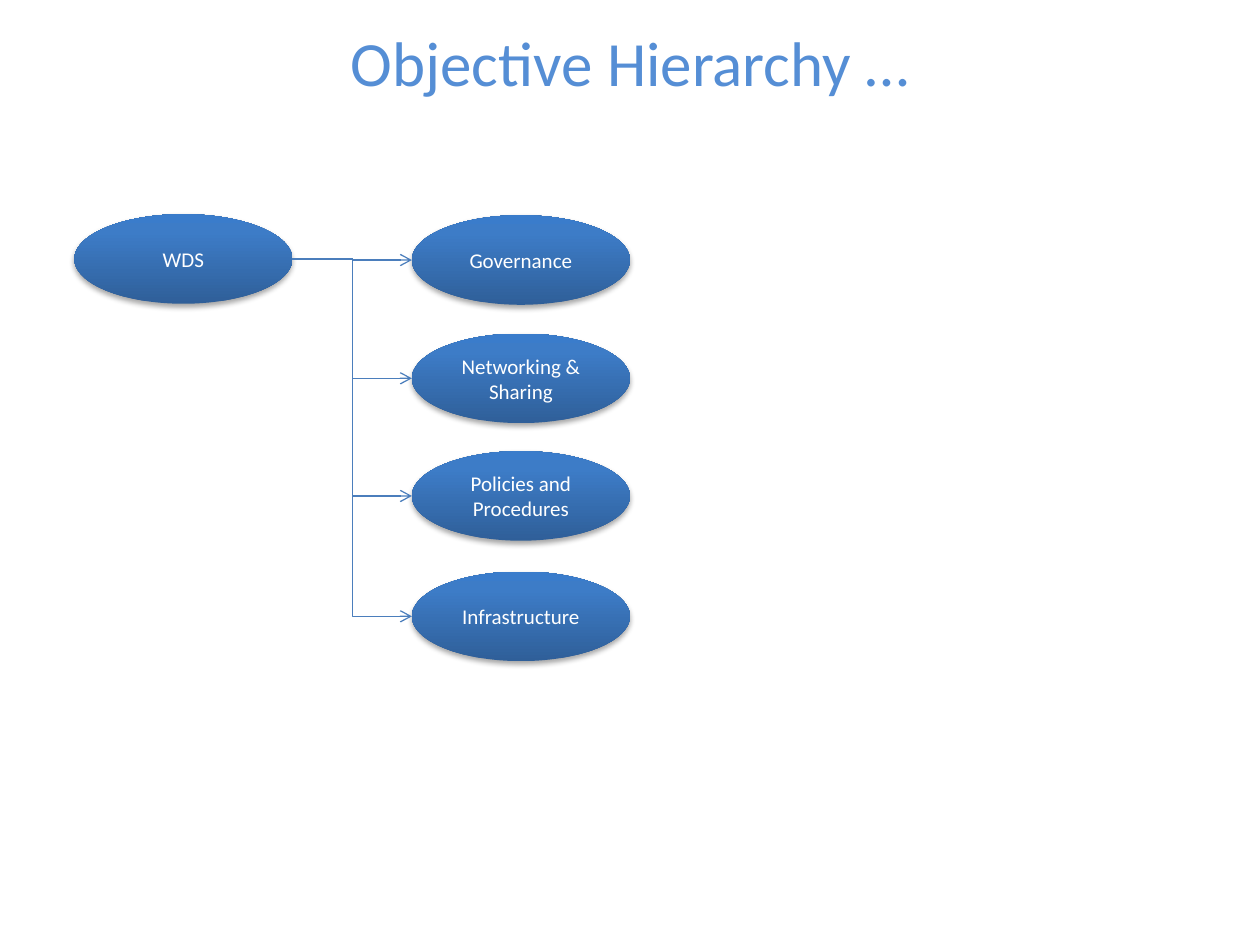
from copy import deepcopy

from lxml.etree import SubElement
from pptx import Presentation
from pptx.dml.color import RGBColor
from pptx.enum.shapes import MSO_CONNECTOR, MSO_SHAPE
from pptx.enum.text import MSO_ANCHOR, PP_ALIGN
from pptx.oxml.ns import qn
from pptx.util import Pt

FONT = "Calibri"
GRADIENT = [(0, "2F5F99"), (0.8, "3D7CC7"), (1, "3A7CCB")]
NODE_WIDTH, NODE_HEIGHT = 124.6, 51.2
ROOT = ("WDS", 42.5, 122.4)
BRANCH_LEFT = 235.4
BRANCHES = [
    ("Governance", 123),
    ("Networking & Sharing", 190.6),
    ("Policies and Procedures", 257.8),
    ("Infrastructure", 326.6),
]


def color(hex_string):
    return RGBColor.from_string(hex_string)


def write_text(shape, text, size, hex_string):
    frame = shape.text_frame
    frame.word_wrap = True
    frame.vertical_anchor = MSO_ANCHOR.MIDDLE
    paragraph = frame.paragraphs[0]
    paragraph.alignment = PP_ALIGN.CENTER
    run = paragraph.add_run()
    run.text = text
    run.font.name = FONT
    run.font.size = Pt(size)
    run.font.color.rgb = color(hex_string)


def add_title(slide, left, top, width, height):
    box = slide.shapes.add_textbox(Pt(left), Pt(top), Pt(width), Pt(height))
    write_text(box, "Objective Hierarchy …", 36, "558ED5")


def fill_gradient(shape):
    shape.fill.gradient()
    shape.fill.gradient_angle = 90
    stop_list = shape._element.spPr.find(".//" + qn("a:gsLst"))
    stop_list.append(deepcopy(stop_list[-1]))
    for stop, (position, hex_string) in zip(shape.fill.gradient_stops, GRADIENT):
        stop.position = position
        stop.color.rgb = color(hex_string)


def add_soft_shadow(shape):
    shape.shadow.inherit = False
    effects = shape._element.spPr.find(qn("a:effectLst"))
    shadow = SubElement(effects, qn("a:outerShdw"), blurRad=str(Pt(3.15)),
                        dist=str(Pt(1.8)), dir="5400000", rotWithShape="0")
    black = SubElement(shadow, qn("a:srgbClr"), val="000000")
    SubElement(black, qn("a:alpha"), val="35000")


def add_node(slide, text, left, top):
    node = slide.shapes.add_shape(MSO_SHAPE.OVAL, Pt(left), Pt(top),
                                  Pt(NODE_WIDTH), Pt(NODE_HEIGHT))
    fill_gradient(node)
    node.line.fill.background()
    add_soft_shadow(node)
    write_text(node, text, 12, "FFFFFF")
    return node


def add_arrow(slide, parent, child):
    """Run an elbow arrow from the parent's right side to the child's left side."""
    arrow = slide.shapes.add_connector(
        MSO_CONNECTOR.ELBOW,
        parent.left + parent.width, parent.top + parent.height // 2,
        child.left, child.top + child.height // 2)
    arrow.line.color.rgb = color("4B7EBC")
    arrow.line.width = Pt(0.75)
    SubElement(arrow.line._get_or_add_ln(), qn("a:tailEnd"), type="arrow")
    SubElement(arrow._element.spPr, qn("a:effectLst"))


def add_hierarchy(slide):
    root = add_node(slide, *ROOT)
    for text, top in BRANCHES:
        branch = add_node(slide, text, BRANCH_LEFT, top)
        add_arrow(slide, root, branch)


def main():
    presentation = Presentation()
    presentation.slide_width, presentation.slide_height = Pt(720), Pt(540)
    slide = presentation.slides.add_slide(presentation.slide_layouts[6])
    add_title(slide, 0, -0.7, 720, 72)
    add_hierarchy(slide)
    presentation.save("out.pptx")


if __name__ == "__main__":
    main()
